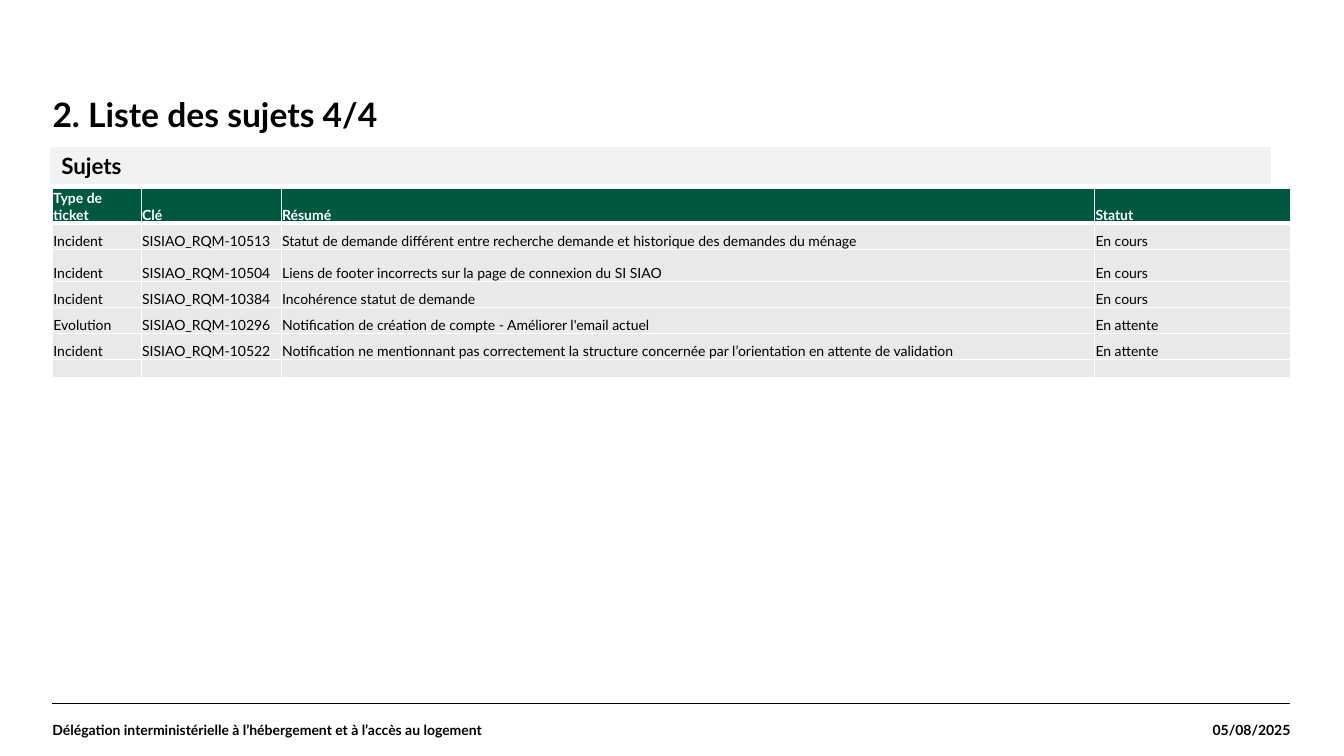
from dataclasses import dataclass

from lxml.etree import SubElement
from pptx import Presentation
from pptx.dml.color import RGBColor
from pptx.enum.shapes import MSO_CONNECTOR, MSO_SHAPE
from pptx.enum.text import MSO_ANCHOR as Anchor, PP_ALIGN as Align
from pptx.oxml.ns import qn
from pptx.util import Pt


@dataclass(frozen=True)
class Theme:
    font: str = "Lato"
    ink: RGBColor = RGBColor(0, 0, 0)
    white: RGBColor = RGBColor(255, 255, 255)
    green: RGBColor = RGBColor(0x00, 0x58, 0x41)
    row_grey: RGBColor = RGBColor(0xE7, 0xEA, 0xE9)
    bar_grey: RGBColor = RGBColor(0xF2, 0xF2, 0xF2)
    title_size: int = 24
    bar_size: int = 16
    small_size: int = 10


THEME = Theme()
LEFT, WIDTH = 37.5, 884.2
COLUMN_WIDTHS = (63.4, 100, 581, 139.8)
ROW_HEIGHTS = (23, 18.7, 23, 18.7, 18.7, 18.7, 11.5)
HEADINGS = ("Type de ticket", "Clé", "Résumé", "Statut")
TICKETS = (
    ("Incident", "SISIAO_RQM-10513",
     "Statut de demande différent entre recherche demande et historique des demandes du ménage",
     "En cours"),
    ("Incident", "SISIAO_RQM-10504",
     "Liens de footer incorrects sur la page de connexion du SI SIAO", "En cours"),
    ("Incident", "SISIAO_RQM-10384", "Incohérence statut de demande", "En cours"),
    ("Evolution", "SISIAO_RQM-10296",
     "Notification de création de compte - Améliorer l'email actuel", "En attente"),
    ("Incident", "SISIAO_RQM-10522",
     "Notification ne mentionnant pas correctement la structure concernée par "
     "l’orientation en attente de validation", "En attente"),
    ("", "", "", ""),
)


def add_run(paragraph, text, size, color=THEME.ink, bold=True):
    run = paragraph.add_run()
    run.text = text
    run.font.name = THEME.font
    run.font.size = Pt(size)
    run.font.bold = bold
    run.font.color.rgb = color


def add_text(slide, box, text, size, anchor=Anchor.MIDDLE, align=Align.LEFT):
    """Add a text box without insets and return its paragraph."""
    frame = slide.shapes.add_textbox(*map(Pt, box)).text_frame
    frame.word_wrap = True
    frame.vertical_anchor = anchor
    frame.margin_left = frame.margin_top = frame.margin_right = frame.margin_bottom = 0
    paragraph = frame.paragraphs[0]
    paragraph.alignment = align
    add_run(paragraph, text, size)
    return paragraph


def add_section_bar(slide, box, text):
    bar = slide.shapes.add_shape(MSO_SHAPE.RECTANGLE, *map(Pt, box))
    bar.shadow.inherit = False
    bar.fill.solid()
    bar.fill.fore_color.rgb = THEME.bar_grey
    bar.line.color.rgb = THEME.bar_grey
    bar.line.width = Pt(2)
    bar.text_frame.vertical_anchor = Anchor.MIDDLE
    paragraph = bar.text_frame.paragraphs[0]
    paragraph.alignment = Align.LEFT
    add_run(paragraph, text, THEME.bar_size)


def set_borders(cell, widths):
    """Draw white borders; widths are given by side tag, before the fill is set."""
    properties = cell._tc.get_or_add_tcPr()
    for side, width in widths.items():
        line = SubElement(properties, qn(f"a:{side}"), w=str(Pt(width)))
        fill = SubElement(line, qn("a:solidFill"))
        SubElement(fill, qn("a:srgbClr"), val=str(THEME.white))


def fill_cell(cell, text, heading, widths):
    set_borders(cell, widths)
    cell.fill.solid()
    cell.fill.fore_color.rgb = THEME.green if heading else THEME.row_grey
    cell.vertical_anchor = Anchor.BOTTOM
    cell.margin_left = cell.margin_top = cell.margin_right = Pt(0.7)
    cell.margin_bottom = 0
    paragraph = cell.text_frame.paragraphs[0]
    if text:
        add_run(paragraph, text, THEME.small_size,
                THEME.white if heading else THEME.ink, bold=heading)
    else:
        SubElement(paragraph._p, qn("a:endParaRPr"), sz=str(THEME.small_size * 100))


def add_ticket_table(slide, left, top):
    rows = (HEADINGS, *TICKETS)
    table = slide.shapes.add_table(
        len(rows), len(HEADINGS), Pt(left), Pt(top),
        Pt(sum(COLUMN_WIDTHS)), Pt(sum(ROW_HEIGHTS))).table
    table.horz_banding = False
    for column, width in zip(table.columns, COLUMN_WIDTHS):
        column.width = Pt(width)
    for index, (row, height, texts) in enumerate(zip(table.rows, ROW_HEIGHTS, rows)):
        row.height = Pt(height)
        widths = {"lnL": 1, "lnR": 1, "lnT": 3 if index == 1 else 1,
                  "lnB": 3 if index == 0 else 1}
        for cell, text in zip(row.cells, texts):
            fill_cell(cell, text, index == 0, widths)


def add_footer(slide, box, owner, date):
    left, top, width, height = box
    rule = slide.shapes.add_connector(
        MSO_CONNECTOR.STRAIGHT, Pt(left), Pt(top), Pt(left + width), Pt(top))
    rule.line.color.rgb = THEME.ink
    rule.line.width = Pt(0.8)
    SubElement(rule._element.spPr, qn("a:effectLst"))
    date_width = 123
    add_text(slide, (left, top, 620, height), owner, THEME.small_size)
    add_text(slide, (left + width - date_width, top, date_width, height),
             date, THEME.small_size, align=Align.RIGHT)


def main():
    presentation = Presentation()
    presentation.slide_width, presentation.slide_height = Pt(960), Pt(540)
    slide = presentation.slides.add_slide(presentation.slide_layouts[6])
    title = add_text(slide, (LEFT, 70.5, WIDTH, 75.5), "2. Liste des sujets 4/4",
                     THEME.title_size, Anchor.TOP)
    title.line_spacing = 0.9
    add_section_bar(slide, (36.7, 105.8, 870.5, 24.5), "Sujets")
    add_ticket_table(slide, LEFT, 134.6)
    add_footer(slide, (LEFT, 502.5, WIDTH, 37.5),
               "Délégation interministérielle à l’hébergement et à l’accès au logement",
               "05/08/2025")
    presentation.save("out.pptx")


if __name__ == "__main__":
    main()
